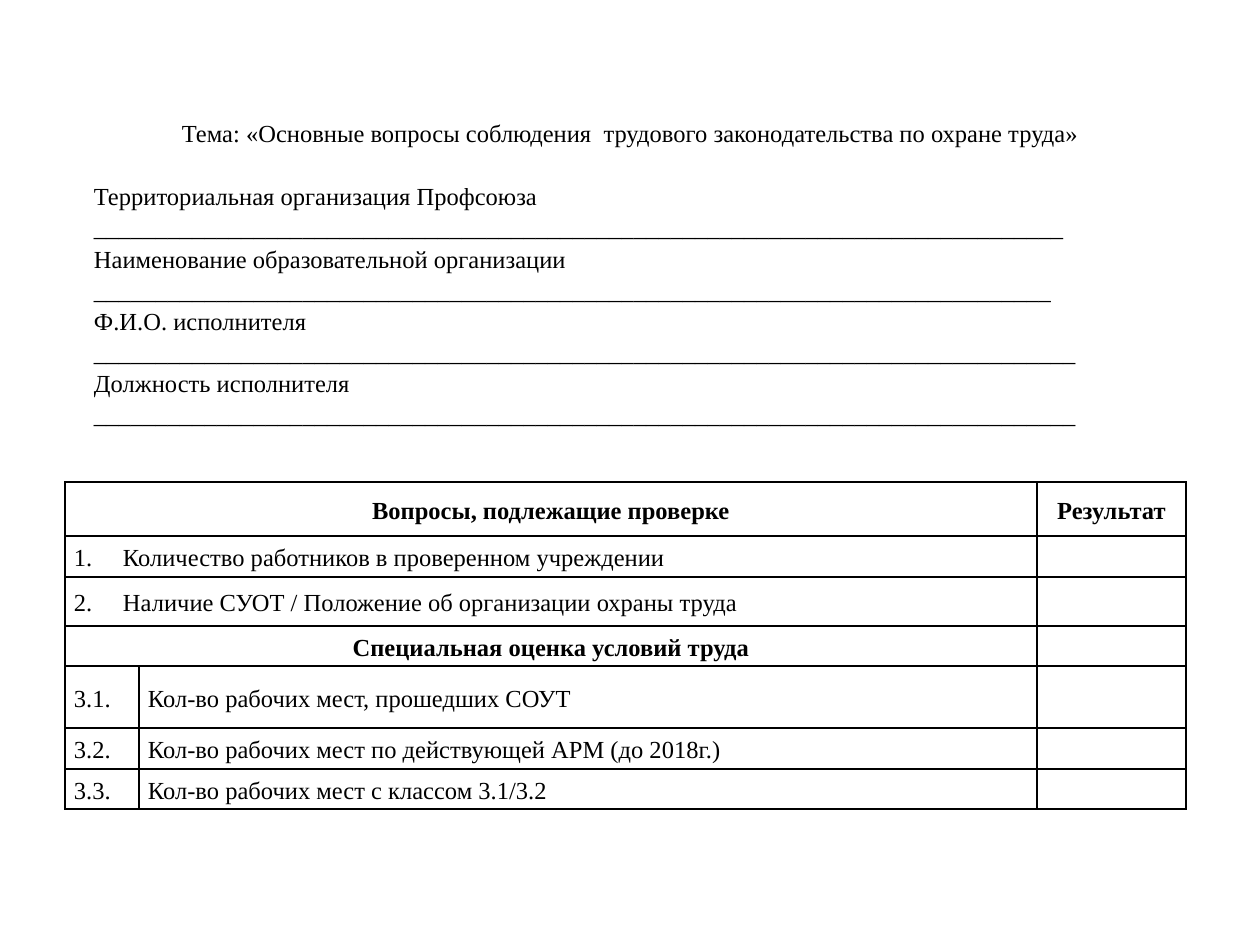
from dataclasses import dataclass
from lxml.etree import SubElement
from pptx import Presentation
from pptx.dml.color import RGBColor
from pptx.enum.text import MSO_ANCHOR as Anchor, PP_ALIGN as Align
from pptx.oxml.ns import qn
from pptx.util import Pt

FORM_ROWS = [
    [("Территориальная организация Профсоюза", 79)],
    [("Наименование образовательной организации", 78), ("Ф.И.О. исполнителя", 80)],
    [("Должность исполнителя", 80)],
]
TOPIC = "Тема: «Основные вопросы соблюдения  трудового законодательства по охране труда»"
FORM_HEIGHTS = [157, 125, 62, 24]
FORM_WIDTHS = [54, 62, 93, 93, 547, 44, 198]

CHECKLIST = [
    ("heading", 54, ["Вопросы, подлежащие проверке", "Результат"]),
    ("question", 41, ["1.\tКоличество работников в проверенном учреждении"]),
    ("question", 49, ["2.\tНаличие СУОТ / Положение об организации охраны труда"]),
    ("heading", 40, ["Специальная оценка условий труда"]),
    ("item", 62, ["3.1.", "Кол-во рабочих мест, прошедших СОУТ"]),
    ("item", 41, ["3.2.", "Кол-во рабочих мест по действующей АРМ (до 2018г.)"]),
    ("item", 40, ["3.3.", "Кол-во рабочих мест с классом 3.1/3.2"]),
]
CHECKLIST_WIDTHS = [74, 898, 149]


@dataclass(frozen=True)
class Theme:
    font: str = "Times New Roman"
    size: int = 14
    ink: str = "000000"
    border: int = 1
    spacing: float = 1.15


THEME = Theme()


def px(length):
    return round(length * 914400 / 126)


def add_grid(slide, left, top, widths, heights, anchor):
    frame = slide.shapes.add_table(len(heights), len(widths), px(left), px(top),
                                   px(sum(widths)), px(sum(heights)))
    grid = frame.table
    grid.first_row = grid.horz_banding = False
    for column, width in zip(grid.columns, widths):
        column.width = px(width)
    for row, height in zip(grid.rows, heights):
        row.height = px(height)
    for cell in grid.iter_cells():
        cell.margin_left = cell.margin_right = px(9)
        cell.margin_top = cell.margin_bottom = 0
        cell.vertical_anchor = anchor
        cell.fill.background()
    return grid


def draw_borders(cell):
    properties = cell._tc.get_or_add_tcPr()
    for index, side in enumerate(("a:lnL", "a:lnR", "a:lnT", "a:lnB")):
        line = SubElement(properties, qn(side), w=str(Pt(THEME.border)))
        properties.insert(index, line)
        fill = SubElement(line, qn("a:solidFill"))
        SubElement(fill, qn("a:srgbClr"), val=THEME.ink)


def add_tab(paragraph, position):
    tabs = SubElement(paragraph._p.get_or_add_pPr(), qn("a:tabLst"))
    SubElement(tabs, qn("a:tab"), pos=str(px(position)), algn="l")


def write(cell, lines, align=Align.LEFT, bold=False):
    cell.text = "\n".join(lines)
    for paragraph in cell.text_frame.paragraphs:
        paragraph.alignment = align
        paragraph.line_spacing = THEME.spacing
        if "\t" in paragraph.text:
            add_tab(paragraph, 49)
        font = paragraph.font
        font.name, font.size, font.bold = THEME.font, Pt(THEME.size), bold
        font.color.rgb = RGBColor.from_string(THEME.ink)


def add_form(slide):
    form = add_grid(slide, 85, 85, FORM_WIDTHS, FORM_HEIGHTS, Anchor.BOTTOM)
    for index, fields in enumerate(FORM_ROWS):
        lines = [f"{label} {'_' * blanks}" for label, blanks in fields]
        cell = form.cell(index, 0)
        cell.merge(form.cell(index, len(FORM_WIDTHS) - 1))
        write(cell, [TOPIC] + lines if index == 0 else lines)
    topic = form.cell(0, 0).text_frame.paragraphs[0]
    topic.alignment = Align.CENTER
    topic.space_after = Pt(18)


def add_checklist(slide):
    heights = [height for _, height, _ in CHECKLIST]
    checklist = add_grid(slide, 65, 482, CHECKLIST_WIDTHS, heights, Anchor.MIDDLE)
    for cell in checklist.iter_cells():
        draw_borders(cell)
    for index, (kind, _, texts) in enumerate(CHECKLIST):
        columns = (0, 1) if kind == "item" else (0, 2)
        if kind != "item":
            checklist.cell(index, 0).merge(checklist.cell(index, 1))
        heading = kind == "heading"
        for column, text in zip(columns, texts):
            write(checklist.cell(index, column), [text],
                  Align.CENTER if heading else Align.LEFT, heading)


def main():
    deck = Presentation()
    deck.slide_width, deck.slide_height = px(1260), px(945)
    slide = deck.slides.add_slide(deck.slide_layouts[6])
    add_form(slide)
    add_checklist(slide)
    deck.save("out.pptx")


if __name__ == "__main__":
    main()
